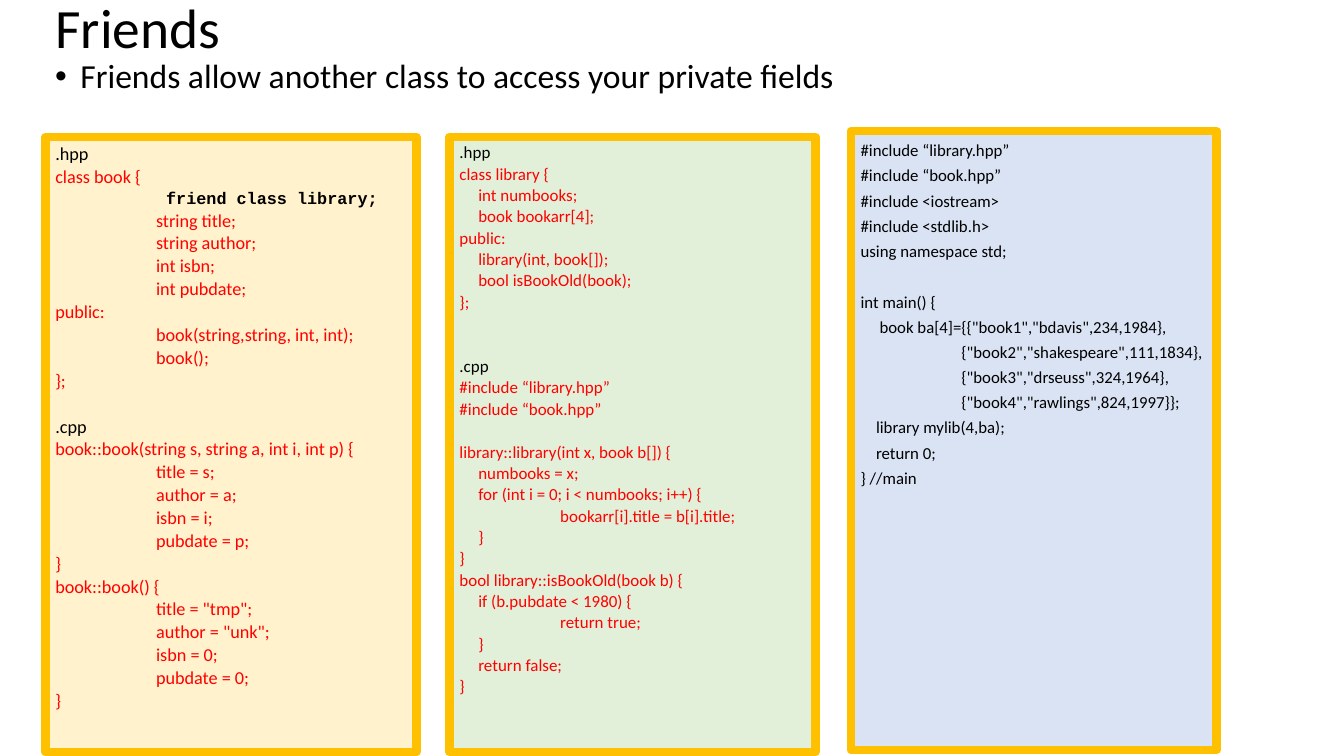
from dataclasses import dataclass

from lxml import etree
from pptx import Presentation
from pptx.dml.color import RGBColor
from pptx.enum.shapes import MSO_SHAPE
from pptx.enum.text import MSO_ANCHOR, MSO_AUTO_SIZE, PP_ALIGN
from pptx.oxml.ns import qn
from pptx.util import Pt

RECT = MSO_SHAPE.RECTANGLE
TOP, MIDDLE = MSO_ANCHOR.TOP, MSO_ANCHOR.MIDDLE
NO_FIT = MSO_AUTO_SIZE.NONE
LEFT = PP_ALIGN.LEFT
TITLE_ONLY = 5

# Leading spaces in a listing select one of these indents, in points.
INDENTS = (0, 11, 13.5, 72, 79.2)

BOOK = """.hpp
class book {
    friend class library;
   string title;
   string author;
   int isbn;
   int pubdate;
public:
   book(string,string, int, int);
   book();
};

.cpp
book::book(string s, string a, int i, int p) {
   title = s;
   author = a;
   isbn = i;
   pubdate = p;
}
book::book() {
   title = "tmp";
   author = "unk";
   isbn = 0;
   pubdate = 0;
}"""

LIBRARY = """.hpp
class library {
  int numbooks;
  book bookarr[4];
public:
  library(int, book[]);
  bool isBookOld(book);
};


.cpp
#include “library.hpp”
#include “book.hpp”

library::library(int x, book b[]) {
  numbooks = x;
  for (int i = 0; i < numbooks; i++) {
   bookarr[i].title = b[i].title;
  }
}
bool library::isBookOld(book b) {
  if (b.pubdate < 1980) {
   return true;
  }
  return false;
}"""

MAIN = """#include “library.hpp”
#include “book.hpp”
#include <iostream>
#include <stdlib.h>
using namespace std;

int main() {
  book ba[4]={{"book1","bdavis",234,1984},
   {"book2","shakespeare",111,1834},
   {"book3","drseuss",324,1964},
   {"book4","rawlings",824,1997}};
 library mylib(4,ba);
 return 0;
} //main"""


@dataclass(frozen=True)
class Theme:
    """Colours, fonts and type sizes."""
    ink: str = "000000"
    code: str = "FF0000"
    border: str = "FFC000"
    cream: str = "FFF2CC"
    green: str = "E2F0D9"
    blue: str = "DAE3F3"
    font: str = "Calibri"
    mono: str = "Courier New"
    title: float = 39.6
    body: float = 24
    book: float = 13
    library: float = 12.1
    main: float = 12
    gap: float = 0.7
    line_height: float = 1.22


def write(p, text, *, size, color, font, bold=False, indent=0, hanging=0,
          spacing=1.0, before=0):
    """Write one formatted paragraph."""
    p.alignment = LEFT
    p.line_spacing = spacing
    p.space_before = Pt(before)
    pPr = p._p.get_or_add_pPr()
    pPr.set("marL", str(Pt(indent)))
    pPr.set("indent", str(Pt(-hanging)))
    r = p.add_run()
    r.text = text
    r.font.size = Pt(size)
    r.font.name = font
    r.font.bold = bold
    r.font.color.rgb = RGBColor.from_string(color)


class Deck:
    """Holds the theme and the current slide."""

    def __init__(self, prs, theme):
        """Start a title-only slide."""
        self.theme = theme
        self.s = prs.slides.add_slide(prs.slide_layouts[TITLE_ONLY])

    def frame(self, sp, anchor):
        """Prepare a shape's text frame."""
        tf = sp.text_frame
        tf.auto_size = NO_FIT
        tf.word_wrap = True
        tf.vertical_anchor = anchor
        return tf

    def title(self, text, x, y, w, h):
        """Place and fill the title placeholder."""
        t, sp = self.theme, self.s.shapes.title
        sp.left, sp.top, sp.width, sp.height = Pt(x), Pt(y), Pt(w), Pt(h)
        write(self.frame(sp, MIDDLE).paragraphs[0], text, size=t.title,
              color=t.ink, font=t.font, spacing=0.9)

    def bullet(self, text, x, y, w, h):
        """Add a bulleted line of text."""
        t = self.theme
        sp = self.s.shapes.add_textbox(Pt(x), Pt(y), Pt(w), Pt(h))
        p = self.frame(sp, TOP).paragraphs[0]
        write(p, text, size=t.body, color=t.ink, font=t.font, indent=18,
              hanging=18, spacing=0.9)
        pPr = p._p.get_or_add_pPr()
        etree.SubElement(pPr, qn("a:buFont")).set("typeface", "Arial")
        etree.SubElement(pPr, qn("a:buChar")).set("char", "•")

    def listing(self, code, x, y, w, h, *, fill, size, color, spacing=1.0):
        """Add a bordered panel of code."""
        t = self.theme
        sp = self.s.shapes.add_shape(RECT, Pt(x), Pt(y), Pt(w), Pt(h))
        sp.shadow.inherit = False
        sp.fill.solid()
        sp.fill.fore_color.rgb = RGBColor.from_string(fill)
        sp.line.color.rgb = RGBColor.from_string(t.border)
        sp.line.width = Pt(6)
        tf = self.frame(sp, TOP)
        p, before = tf.paragraphs[0], t.gap
        for line in code.split("\n"):
            if not line:
                before += size * t.line_height * spacing + t.gap
                continue
            text = line.lstrip()
            friend = text.startswith("friend")
            black = friend or text.startswith(".")
            if p is None:
                p = tf.add_paragraph()
            write(p, text, size=12 if friend else size,
                  color=t.ink if black else color,
                  font=t.mono if friend else t.font, bold=friend,
                  indent=INDENTS[len(line) - len(text)],
                  spacing=spacing, before=before)
            p, before = None, t.gap


def main():
    """Build and save the slide."""
    prs = Presentation()
    prs.slide_width, prs.slide_height = Pt(960), Pt(540)
    t = Theme()
    deck = Deck(prs, t)
    deck.title("Friends", 32.4, 0, 828, 43.9)
    deck.bullet("Friends allow another class to access your private fields",
                32.4, 38.9, 828, 54.7)
    deck.listing(BOOK, 32.4, 97.9, 265, 439.2, fill=t.cream, size=t.book,
                 color=t.code)
    deck.listing(LIBRARY, 321.1, 97.9, 261.4, 439.2, fill=t.green,
                 size=t.library, color=t.code)
    deck.listing(MAIN, 607.7, 93.6, 261.4, 442.1, fill=t.blue, size=t.main,
                 color=t.ink, spacing=1.2)
    prs.save("out.pptx")


if __name__ == "__main__":
    main()
